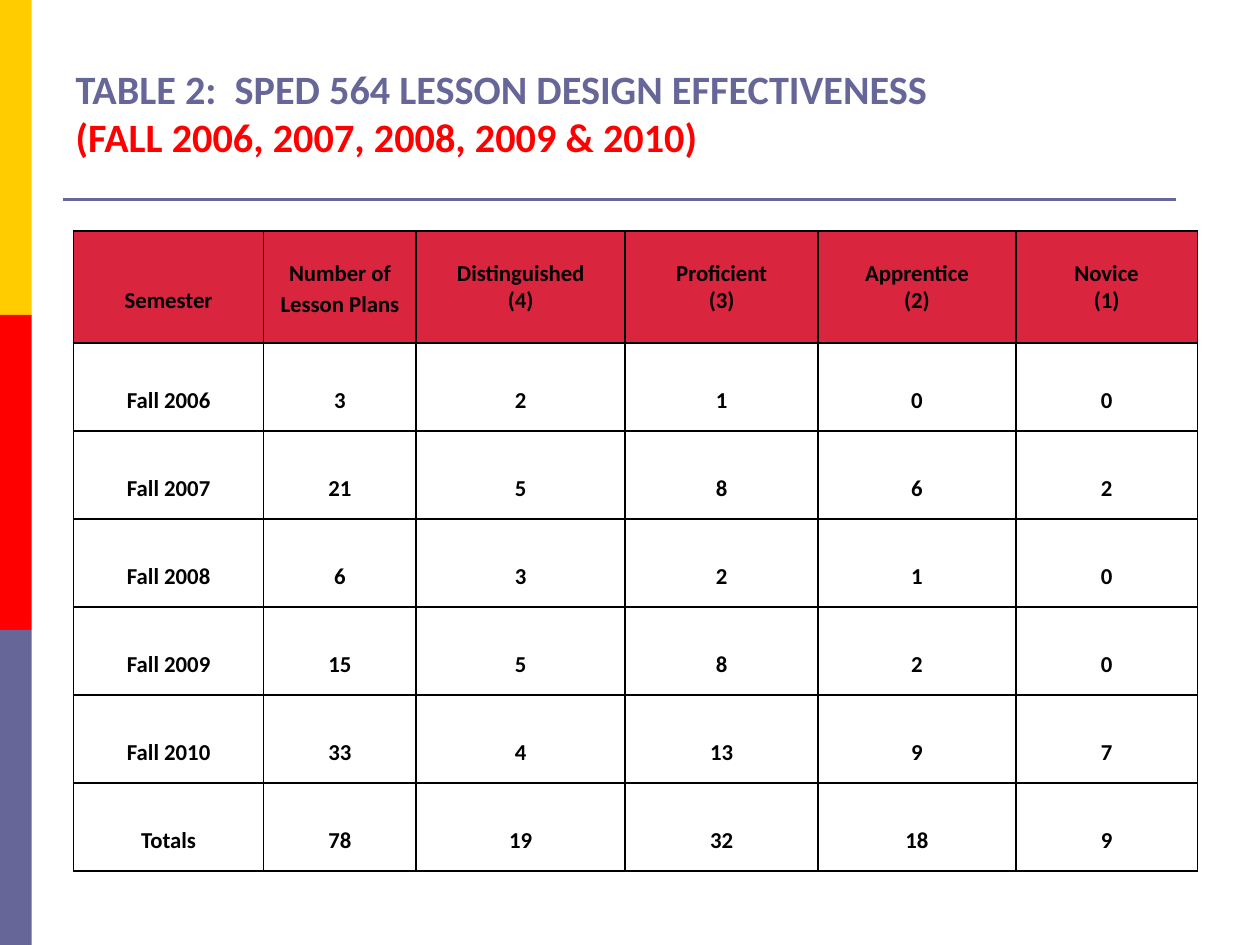
from dataclasses import dataclass

from lxml import etree
from pptx import Presentation
from pptx import util as u
from pptx.dml.color import RGBColor
from pptx.enum import shapes, text
from pptx.oxml.ns import qn


@dataclass(frozen=True)
class Theme:
    font: str = "Calibri"
    title_size: float = 23
    table_size: float = 13
    rule_width: float = 1.5
    border_width: float = 1
    yellow: str = "FFCC00"
    red: str = "FF0000"
    slate: str = "666699"
    header: str = "D9253E"
    body: str = "FFFFFF"
    ink: str = "000000"


THEME = Theme()
TITLE = (
    ("TABLE 2:  SPED 564 LESSON DESIGN EFFECTIVENESS", THEME.slate),
    ("(FALL 2006, 2007, 2008, 2009 & 2010)", THEME.red),
)
HEADINGS = ("Semester", "Number of Lesson Plans", "Distinguished\n(4)",
            "Proficient\n(3)", "Apprentice\n(2)", "Novice\n(1)")
HEADING_SPACING = (2, 1.15, 1, 1, 1, 1)
ROWS = (
    ("Fall 2006", 3, 2, 1, 0, 0),
    ("Fall 2007", 21, 5, 8, 6, 2),
    ("Fall 2008", 6, 3, 2, 1, 0),
    ("Fall 2009", 15, 5, 8, 2, 0),
    ("Fall 2010", 33, 4, 13, 9, 7),
    ("Totals", 78, 19, 32, 18, 9),
)
COLUMN_SHARES = (1.51, 1.21, 1.66, 1.53, 1.57, 1.44)
HEADER_HEIGHT = 2.26


def rgb(value):
    return RGBColor.from_string(value)


def set_font(font, size):
    font.name = THEME.font
    font.size = u.Pt(size)
    font.bold = True


def add_side_bands(slide, left, top, width, height):
    colors = (THEME.yellow, THEME.red, THEME.slate)
    band = height / len(colors)
    for i, color in enumerate(colors):
        sp = slide.shapes.add_shape(
            shapes.MSO_SHAPE.RECTANGLE,
            u.Cm(left), u.Cm(top + i * band), u.Cm(width), u.Cm(band))
        sp.shadow.inherit = False
        sp.fill.solid()
        sp.fill.fore_color.rgb = rgb(color)
        sp.line.fill.background()


def add_rule(slide, left, top, width):
    line = slide.shapes.add_connector(
        shapes.MSO_CONNECTOR.STRAIGHT,
        u.Cm(left), u.Cm(top), u.Cm(left + width), u.Cm(top))
    line.line.color.rgb = rgb(THEME.slate)
    line.line.width = u.Pt(THEME.rule_width)
    etree.SubElement(line._element.spPr, qn("a:effectLst"))


def place_title(slide, left, top, width, height):
    sp = slide.shapes.title
    sp.left, sp.top = u.Cm(left), u.Cm(top)
    sp.width, sp.height = u.Cm(width), u.Cm(height)
    tf = sp.text_frame
    tf.word_wrap = True
    tf.auto_size = text.MSO_AUTO_SIZE.NONE
    tf.vertical_anchor = text.MSO_ANCHOR.MIDDLE
    p = tf.paragraphs[0]
    p.alignment = text.PP_ALIGN.LEFT
    set_font(p.font, THEME.title_size)
    for i, (words, color) in enumerate(TITLE):
        if i:
            p.add_line_break()
        r = p.add_run()
        r.text = words
        r.font.color.rgb = rgb(color)


def add_borders(cell):
    tc_pr = cell._tc.get_or_add_tcPr()
    for side in ("lnL", "lnR", "lnT", "lnB"):
        ln = etree.SubElement(tc_pr, qn(f"a:{side}"),
                              w=str(u.Pt(THEME.border_width)))
        fill = etree.SubElement(ln, qn("a:solidFill"))
        etree.SubElement(fill, qn("a:srgbClr"), val=THEME.ink)


def fill_cell(cell, words, color, spacing, after):
    add_borders(cell)
    cell.fill.solid()
    cell.fill.fore_color.rgb = rgb(color)
    cell.vertical_anchor = text.MSO_ANCHOR.MIDDLE
    cell.margin_left = cell.margin_right = u.Cm(0.13)
    cell.margin_top = cell.margin_bottom = 0
    cell.text_frame.text = str(words)
    for p in cell.text_frame.paragraphs:
        p.alignment = text.PP_ALIGN.CENTER
        p.line_spacing = float(spacing)
        p.space_after = u.Pt(after)
        set_font(p.font, THEME.table_size)
        p.font.color.rgb = rgb(THEME.ink)


def add_results_table(slide, left, top, width, height):
    table = slide.shapes.add_table(
        len(ROWS) + 1, len(HEADINGS),
        u.Cm(left), u.Cm(top), u.Cm(width), u.Cm(height)).table
    table.first_row = table.horz_banding = False
    for column, share in zip(table.columns, COLUMN_SHARES):
        column.width = u.Cm(width * share / sum(COLUMN_SHARES))
    for i, row in enumerate(table.rows):
        row.height = u.Cm((height - HEADER_HEIGHT) / len(ROWS) if i
                          else HEADER_HEIGHT)
    for j, (words, spacing) in enumerate(zip(HEADINGS, HEADING_SPACING)):
        fill_cell(table.cell(0, j), words, THEME.header, spacing, after=0)
    for i, values in enumerate(ROWS, 1):
        for j, value in enumerate(values):
            fill_cell(table.cell(i, j), value, THEME.body, 2, after=10)


def main():
    prs = Presentation()
    prs.slide_width, prs.slide_height = u.Cm(25.4), u.Cm(19.05)
    slide = prs.slides.add_slide(prs.slide_layouts[5])
    add_side_bands(slide, 0, 0, 0.64, 19.05)
    add_rule(slide, 1.27, 4.02, 22.43)
    place_title(slide, 1.27, 0.85, 22.86, 2.82)
    add_results_table(slide, 1.48, 4.66, 22.66, 12.9)
    prs.save("out.pptx")


if __name__ == "__main__":
    main()
